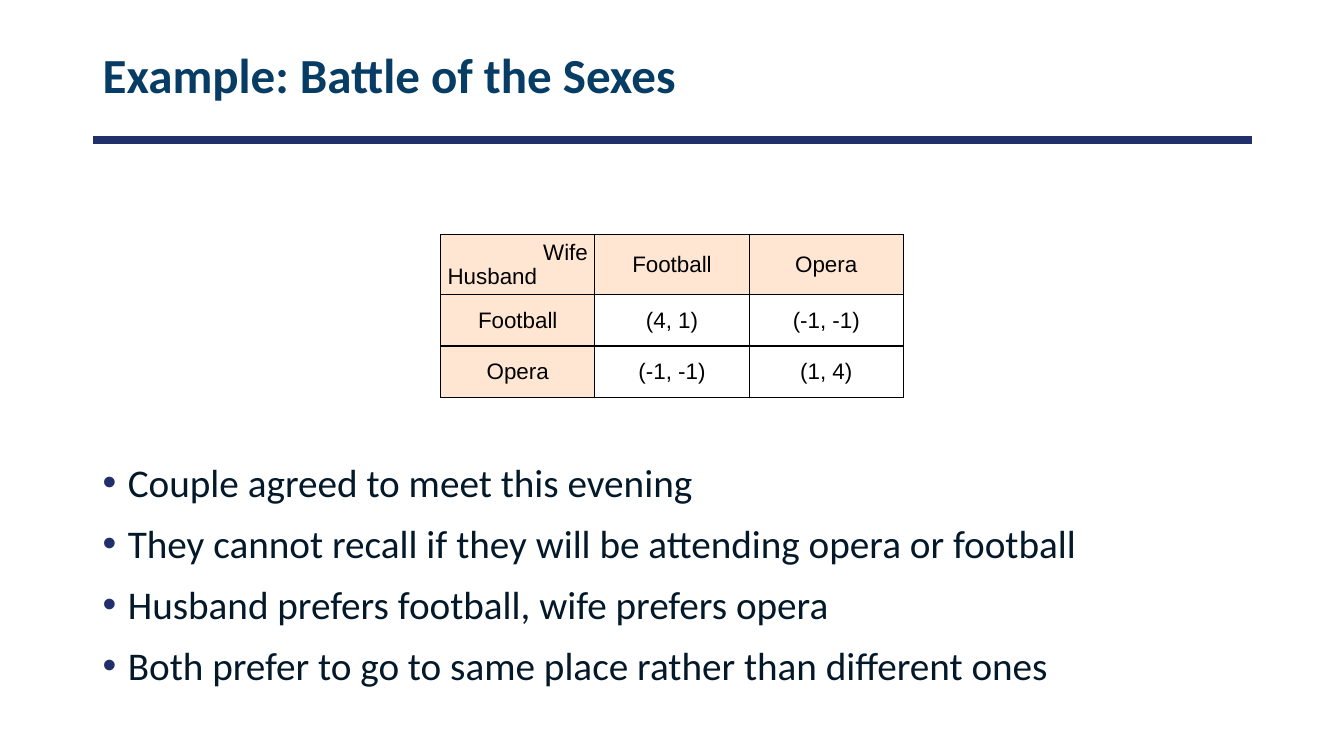
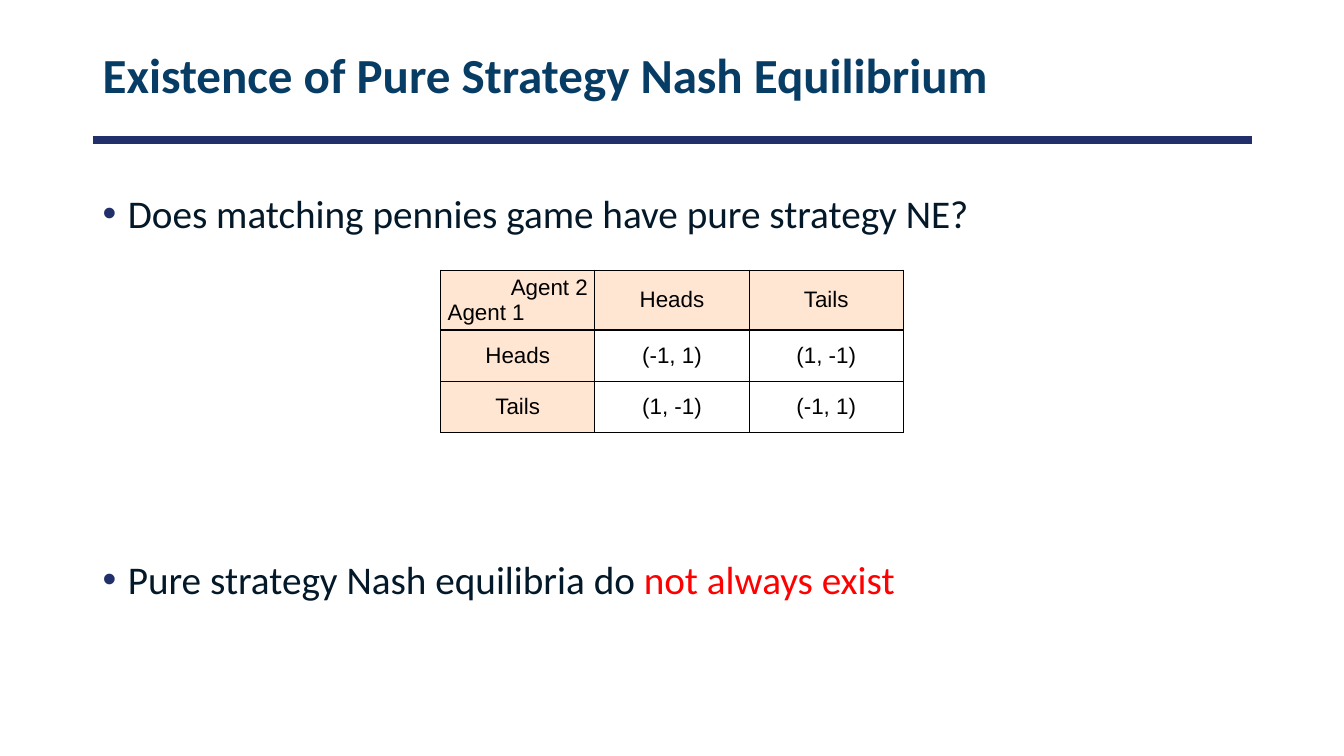
from lxml.etree import SubElement
from pptx import Presentation
from pptx.dml.color import RGBColor
from pptx.enum.shapes import MSO_CONNECTOR
from pptx.enum.text import MSO_ANCHOR as Anchor, PP_ALIGN as Align
from pptx.oxml.ns import qn
from pptx.util import Emu, Pt

# Shared look
NAVY = RGBColor(0x21, 0x30, 0x6A)
TITLE_BLUE = RGBColor(0x07, 0x3C, 0x65)
INK = RGBColor(0x03, 0x18, 0x28)
RED = RGBColor(0xFF, 0x00, 0x00)
BLACK = RGBColor(0x00, 0x00, 0x00)
PEACH = RGBColor(0xFF, 0xE6, 0xD3)
TEXT_FONT, TABLE_FONT = "Calibri", "Arial"

# Layout in px, 100 px to the inch
LEFT, WIDTH = 92, 1150
TITLE_TOP, TITLE_HEIGHT = 23, 108
RULE_Y = 139
BODY_BOTTOM = 727
TABLE_LEFT, COLUMN_WIDTH = 437, 153
ROW_HEIGHTS = (59, 51, 51)
CELL_INSET_X, CELL_INSET_Y = 7, 3
BULLET_INDENT = 25


def px(length):
    return Emu(length * 9144)


def add_run(paragraph, text, size, color, font=TEXT_FONT, bold=False):
    run = paragraph.add_run()
    run.text = text
    run.font.name = font
    run.font.size = Pt(size)
    run.font.bold = bold
    run.font.color.rgb = color


def add_text_frame(slide, top, height):
    box = slide.shapes.add_textbox(px(LEFT), px(top), px(WIDTH), px(height))
    box.text_frame.word_wrap = True
    return box.text_frame


def next_paragraph(frame, index):
    return frame.add_paragraph() if index else frame.paragraphs[0]


def add_heading(slide, title):
    # Rule below the title
    rule = slide.shapes.add_connector(
        MSO_CONNECTOR.STRAIGHT, px(LEFT), px(RULE_Y), px(LEFT + WIDTH), px(RULE_Y))
    rule.line.color.rgb = NAVY
    rule.line.width = Pt(6)
    SubElement(rule.element.spPr, qn("a:effectLst"))

    # Title
    frame = add_text_frame(slide, TITLE_TOP, TITLE_HEIGHT)
    frame.vertical_anchor = Anchor.MIDDLE
    paragraph = frame.paragraphs[0]
    paragraph.line_spacing = 0.9
    add_run(paragraph, title, 35, TITLE_BLUE, bold=True)


def set_bullet(paragraph):
    props = paragraph._p.get_or_add_pPr()
    props.set("marL", str(px(BULLET_INDENT)))
    props.set("indent", str(-px(BULLET_INDENT)))
    color = SubElement(props, qn("a:buClr"))
    SubElement(color, qn("a:srgbClr"), val=str(NAVY))
    SubElement(props, qn("a:buFont"), typeface="Arial")
    SubElement(props, qn("a:buChar"), char="•")


def add_bullets(slide, top, bullets, gap=10):
    """Each bullet is a list of (text, color) runs; gap separates them in points."""
    frame = add_text_frame(slide, top, BODY_BOTTOM - top)
    for index, runs in enumerate(bullets):
        paragraph = next_paragraph(frame, index)
        paragraph.space_before = Pt(gap if index else 10)
        set_bullet(paragraph)
        for text, color in runs:
            add_run(paragraph, text, 28, color)


def set_borders(cell):
    props = cell._tc.get_or_add_tcPr()
    for position, side in enumerate(("lnL", "lnR", "lnT", "lnB")):
        border = props.makeelement(qn(f"a:{side}"), {"w": str(Pt(1))})
        fill = SubElement(border, qn("a:solidFill"))
        SubElement(fill, qn("a:srgbClr"), val=str(BLACK))
        props.insert(position, border)


def fill_cell(cell, lines, is_header):
    """Write (text, alignment) lines into a bordered cell."""
    cell.margin_left = cell.margin_right = px(CELL_INSET_X)
    cell.margin_top = cell.margin_bottom = px(CELL_INSET_Y)
    cell.vertical_anchor = Anchor.MIDDLE
    if is_header:
        cell.fill.solid()
        cell.fill.fore_color.rgb = PEACH
    else:
        cell.fill.background()
    set_borders(cell)
    for index, (text, alignment) in enumerate(lines):
        paragraph = next_paragraph(cell.text_frame, index)
        paragraph.alignment = alignment
        add_run(paragraph, text, 16, BLACK, TABLE_FONT)


def add_game(slide, top, row_player, column_player, actions, payoffs):
    """Payoff matrix of a two-player game in which both share the actions."""
    size = len(actions) + 1
    table = slide.shapes.add_table(
        size, size, px(TABLE_LEFT), px(top),
        px(COLUMN_WIDTH * size), px(sum(ROW_HEIGHTS))).table
    table.first_row = table.horz_banding = False
    for column in table.columns:
        column.width = px(COLUMN_WIDTH)
    for row, height in zip(table.rows, ROW_HEIGHTS):
        row.height = px(height)

    # Corner names the players
    fill_cell(table.cell(0, 0),
              [(column_player, Align.RIGHT), (row_player, Align.LEFT)], True)
    # Actions along both edges, payoffs inside
    for i, action in enumerate(actions, 1):
        fill_cell(table.cell(0, i), [(action, Align.CENTER)], True)
        fill_cell(table.cell(i, 0), [(action, Align.CENTER)], True)
        for j, payoff in enumerate(payoffs[i - 1], 1):
            fill_cell(table.cell(i, j), [(payoff, Align.CENTER)], False)


def add_slide(deck, title):
    slide = deck.slides.add_slide(deck.slide_layouts[6])
    add_heading(slide, title)
    return slide


def main():
    deck = Presentation()
    deck.slide_width, deck.slide_height = px(1333), px(750)

    # Battle of the sexes
    battle = add_slide(deck, "Example: Battle of the Sexes")
    add_bullets(battle, 450, [
        [("Couple agreed to meet this evening", INK)],
        [("They cannot recall if they will be attending opera or football", INK)],
        [("Husband prefers football, wife prefers opera", INK)],
        [("Both prefer to go to same place rather than different ones", INK)],
    ])
    add_game(battle, 233, "Husband", "Wife", ("Football", "Opera"),
             (("(4, 1)", "(-1, -1)"), ("(-1, -1)", "(1, 4)")))

    # Matching pennies, with the matrix between the two bullets
    pennies = add_slide(deck, "Existence of Pure Strategy Nash Equilibrium")
    add_bullets(pennies, 183, [
        [("Does matching pennies game have pure strategy NE?", INK)],
        [("Pure strategy Nash equilibria do ", INK), ("not always exist", RED)],
    ], gap=228)
    add_game(pennies, 268, "Agent 1", "Agent 2", ("Heads", "Tails"),
             (("(-1, 1)", "(1, -1)"), ("(1, -1)", "(-1, 1)")))

    deck.save("out.pptx")


if __name__ == "__main__":
    main()
